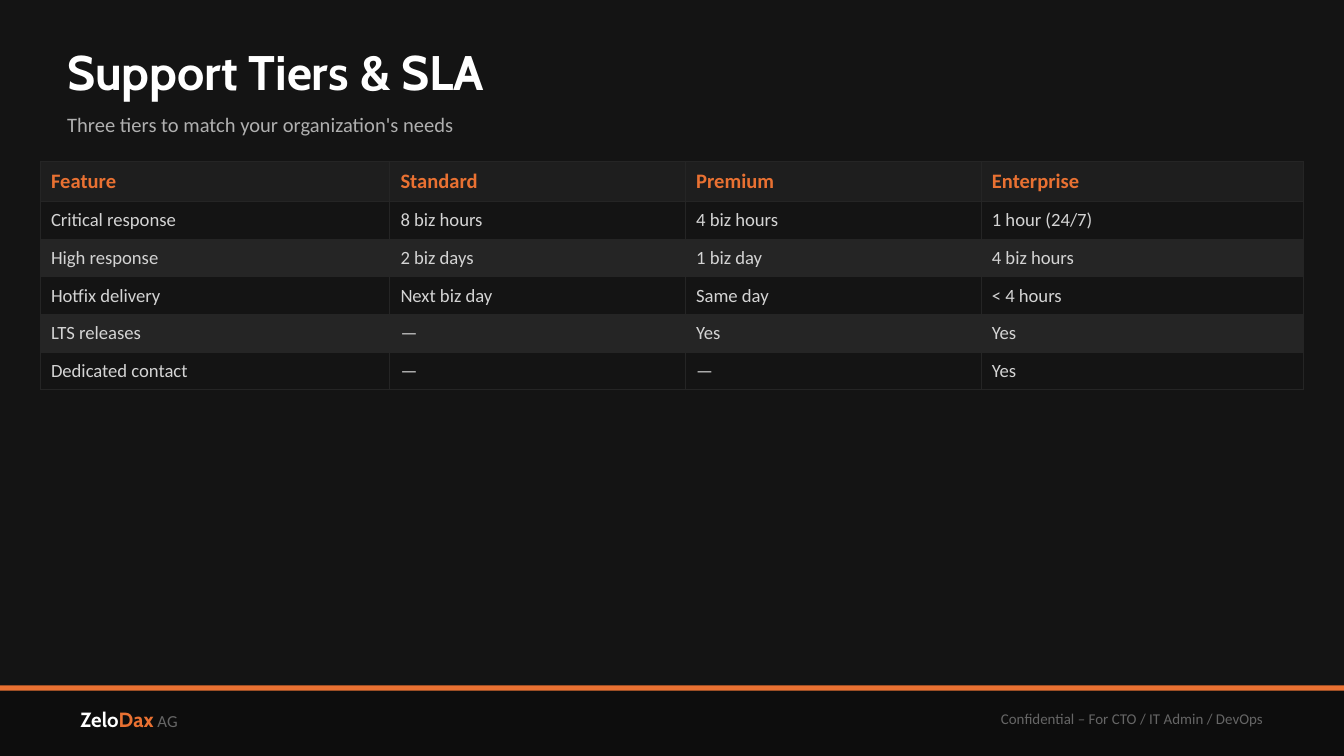
import lxml.etree
import pptx
import pptx.dml.color
import pptx.enum.shapes
import pptx.enum.text
import pptx.oxml.ns
import pptx.util

PX = 4572
COLORS = {
    "page": "141414", "footer": "0D0D0D", "orange": "E97132", "white": "FFFFFF",
    "muted": "666666", "subtitle": "B0B0B0", "body": "D4D4D4",
    "header": "1E1E1E", "band": "252525",
}
FORMATS = {
    "title": ({"name": "Cabin", "size": pptx.util.Pt(26), "bold": True}, "white"),
    "subtitle": ({"name": "Calibri", "size": pptx.util.Pt(11), "bold": False}, "subtitle"),
    "brand": ({"name": "Cabin", "size": pptx.util.Pt(11), "bold": True}, "white"),
    "accent": ({"name": "Cabin", "size": pptx.util.Pt(11), "bold": True}, "orange"),
    "suffix": ({"name": "Calibri", "size": pptx.util.Pt(9), "bold": False}, "muted"),
    "notice": ({"name": "Calibri", "size": pptx.util.Pt(8), "bold": False}, "muted"),
    "header": ({"name": "Calibri", "size": pptx.util.Pt(11), "bold": True}, "orange"),
    "body": ({"name": "Calibri", "size": pptx.util.Pt(10), "bold": False}, "body"),
}
MIDDLE = pptx.enum.text.MSO_ANCHOR.MIDDLE
LEFT = pptx.enum.text.PP_ALIGN.LEFT
RIGHT = pptx.enum.text.PP_ALIGN.RIGHT


def paint(fill, color):
    fill.solid()
    fill.fore_color.rgb = pptx.dml.color.RGBColor.from_string(COLORS[color])


def write(para, spans):
    for text, style in spans:
        span = para.add_run()
        span.text = text
        values, color = FORMATS[style]
        for name, value in values.items():
            setattr(span.font, name, value)
        paint(span.font.fill, color)


deck = pptx.Presentation()
deck.slide_width = 2000 * PX
deck.slide_height = 1125 * PX
page = deck.slides.add_slide(deck.slide_layouts[6])
paint(page.background.fill, "page")

for height, color in [(105, "footer"), (8, "orange")]:
    bar = page.shapes.add_shape(
        pptx.enum.shapes.MSO_SHAPE.RECTANGLE, 0, 1020 * PX, 2000 * PX, height * PX)
    bar.shadow.inherit = False
    paint(bar.fill, color)
    bar.line.fill.background()

texts = [
    ((100, 1030, 600, 80), (20, 10), LEFT,
     [("Zelo", "brand"), ("Dax", "accent"), (" AG", "suffix")]),
    ((1100, 1030, 800, 80), (20, 10), RIGHT,
     [("Confidential – For CTO / IT Admin / DevOps", "notice")]),
    ((100, 50, 1800, 110), (0, 0), LEFT, [("Support Tiers & SLA", "title")]),
    ((100, 150, 1800, 70), (0, 0), LEFT,
     [("Three tiers to match your organization's needs", "subtitle")]),
]
for place, (side, edge), align, spans in texts:
    box = page.shapes.add_textbox(*[length * PX for length in place])
    frame_format = {
        "word_wrap": True, "vertical_anchor": MIDDLE,
        "margin_left": side * PX, "margin_right": side * PX,
        "margin_top": edge * PX, "margin_bottom": edge * PX,
    }
    for name, value in frame_format.items():
        setattr(box.text_frame, name, value)
    para = box.text_frame.paragraphs[0]
    para.alignment = align
    write(para, spans)

tiers = [
    ["Feature", "Standard", "Premium", "Enterprise"],
    ["Critical response", "8 biz hours", "4 biz hours", "1 hour (24/7)"],
    ["High response", "2 biz days", "1 biz day", "4 biz hours"],
    ["Hotfix delivery", "Next biz day", "Same day", "< 4 hours"],
    ["LTS releases", "—", "Yes", "Yes"],
    ["Dedicated contact", "—", "—", "Yes"],
]
widths = [520, 440, 440, 480]
heights = [60] + [56] * 5
table = page.shapes.add_table(
    len(tiers), len(widths), 60 * PX, 240 * PX, sum(widths) * PX, sum(heights) * PX).table
table.horz_banding = False
for column, width in zip(table.columns, widths):
    column.width = width * PX
cell_format = {
    "vertical_anchor": MIDDLE, "margin_left": 16 * PX, "margin_right": 16 * PX,
    "margin_top": 11 * PX, "margin_bottom": 11 * PX,
}
qn = pptx.oxml.ns.qn
for index, (row, height, values) in enumerate(zip(table.rows, heights, tiers)):
    row.height = height * PX
    style = "body" if index else "header"
    shade = ("band" if index % 2 == 0 else "page") if index else "header"
    for cell, text in zip(row.cells, values):
        for name, value in cell_format.items():
            setattr(cell, name, value)
        properties = cell._tc.get_or_add_tcPr()
        for side in ["a:lnL", "a:lnR", "a:lnT", "a:lnB"]:
            border = lxml.etree.SubElement(properties, qn(side), w=str(pptx.util.Pt(0.5)))
            solid = lxml.etree.SubElement(border, qn("a:solidFill"))
            lxml.etree.SubElement(solid, qn("a:srgbClr"), val=COLORS["band"])
        paint(cell.fill, shade)
        write(cell.text_frame.paragraphs[0], [(text, style)])

deck.save("out.pptx")
